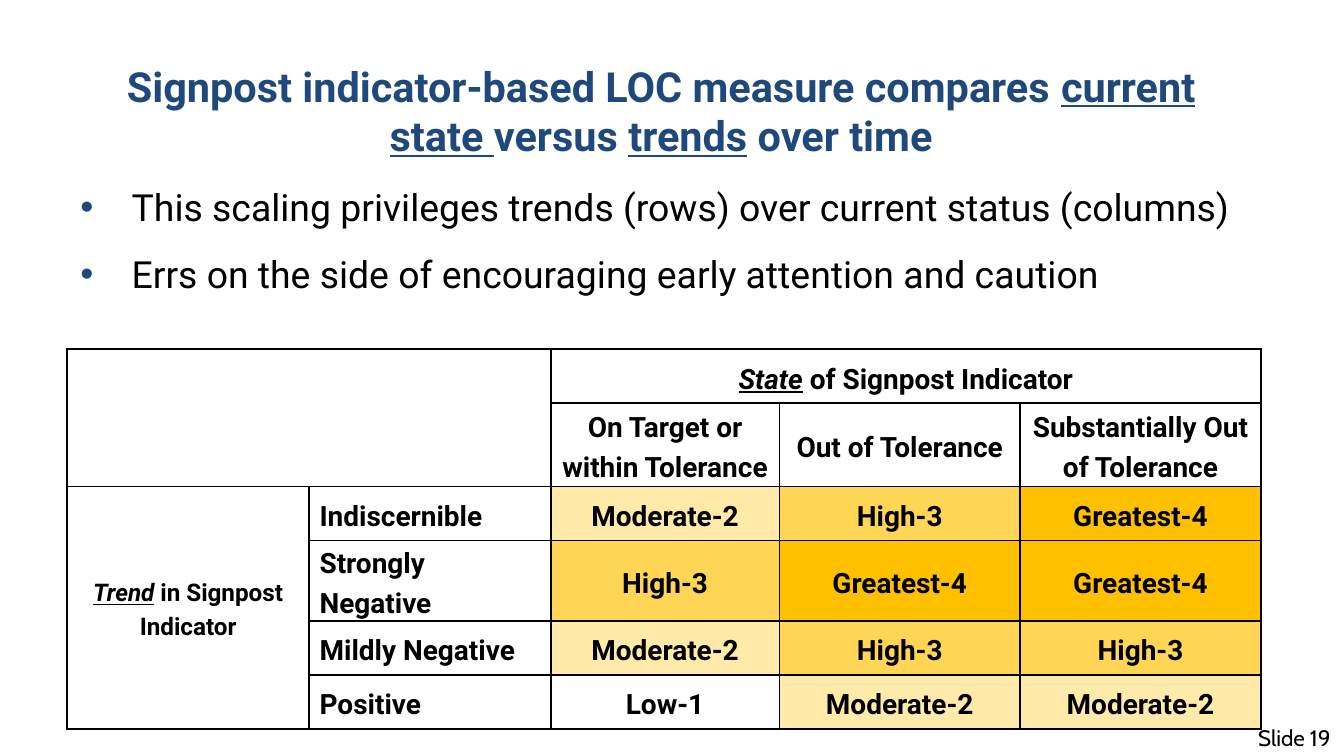
"""Build the slide that rates signpost indicators by state and trend."""
from lxml.etree import SubElement as Sub
from pptx import Presentation
from pptx.dml.color import RGBColor as Rgb
from pptx.enum.text import MSO_ANCHOR as Anchor, PP_ALIGN as Align
from pptx.oxml.ns import qn
from pptx.util import Cm, Pt

HUES = {
    "ink": "000000",
    "navy": "1F497D",
    "white": "FFFFFF",
    "Low-1": "FFFFFF",
    "Moderate-2": "FFEAAA",
    "High-3": "FFD555",
    "Greatest-4": "FFC000",
}
TITLE = [
    ("Signpost indicator-based LOC measure compares ", ""),
    ("current state ", "u"),
    ("versus ", ""),
    ("trends", "u"),
    (" over time", ""),
]
POINTS = [
    ("This scaling privileges trends (rows) over current status (columns)", 18),
    ("Errs on the side of encouraging early attention and caution", 12),
]
STATE = [("State", "iu"), (" of Signpost Indicator", "")]
TREND = [("Trend", "iu"), (" in Signpost Indicator", "")]
HEADS = ["On Target or within Tolerance", "Out of Tolerance",
         "Substantially Out of Tolerance"]
RATES = [
    ("Indiscernible", "Moderate-2", "High-3", "Greatest-4"),
    ("Strongly Negative", "High-3", "Greatest-4", "Greatest-4"),
    ("Mildly Negative", "Moderate-2", "High-3", "High-3"),
    ("Positive", "Low-1", "Moderate-2", "Moderate-2"),
]
WIDTHS = [4.57, 4.57, 4.32, 4.55, 4.55]
HEIGHTS = [0.97, 1.57, 1.02, 1.04, 1.02, 1.02]
MERGES = [((0, 0), (1, 1)), ((0, 2), (0, 4)), ((2, 0), (5, 0))]


def write(para, runs, size, hue="ink", bold=False, face="Roboto"):
    for text, marks in runs:
        run = para.add_run()
        run.text = text
        font = run.font
        font.name, font.size, font.bold = face, Pt(size), bold
        font.italic, font.underline = "i" in marks, "u" in marks
        font.color.rgb = Rgb.from_string(HUES[hue])


def add_box(slide, left, top, width, height):
    frame = slide.shapes.add_textbox(
        Cm(left), Cm(top), Cm(width), Cm(height)).text_frame
    frame.word_wrap = True
    return frame


def add_dot(para):
    props = para._p.get_or_add_pPr()
    props.set("marL", str(Cm(0.97)))
    props.set("indent", str(-Cm(0.97)))
    Sub(Sub(props, qn("a:buClr")), qn("a:srgbClr")).set("val", HUES["navy"])
    Sub(props, qn("a:buFont")).set("typeface", "Arial")
    Sub(props, qn("a:buChar")).set("char", "•")


def style(cell, hue="white"):
    cell.vertical_anchor = Anchor.MIDDLE
    cell.margin_left = cell.margin_right = Cm(0.2)
    cell.margin_top = cell.margin_bottom = 0
    props = cell._tc.get_or_add_tcPr()
    for side in ("lnL", "lnR", "lnT", "lnB"):
        line = Sub(props, qn("a:" + side), w=str(Pt(1)))
        ink = Sub(Sub(line, qn("a:solidFill")), qn("a:srgbClr"))
        ink.set("val", HUES["ink"])
    cell.fill.solid()
    cell.fill.fore_color.rgb = Rgb.from_string(HUES[hue])


def label(cell, runs, size=15, align=Align.CENTER):
    para = cell.text_frame.paragraphs[0]
    para.alignment, para.line_spacing = align, 1.2
    write(para, runs, size, bold=True)


def add_grid(slide):
    grid = slide.shapes.add_table(
        len(HEIGHTS), len(WIDTHS), Cm(1.27), Cm(6.6),
        Cm(sum(WIDTHS)), Cm(sum(HEIGHTS))).table
    grid.first_row = grid.horz_banding = False
    for col, width in zip(grid.columns, WIDTHS):
        col.width = Cm(width)
    for row, height in zip(grid.rows, HEIGHTS):
        row.height = Cm(height)

    texts = {(1, c): head for c, head in enumerate(HEADS, 2)}
    for r, rates in enumerate(RATES, 2):
        texts.update({(r, c): rate for c, rate in enumerate(rates, 1)})
    for r in range(len(HEIGHTS)):
        for c in range(len(WIDTHS)):
            cell, text = grid.cell(r, c), texts.get((r, c))
            style(cell, text if text in HUES else "white")
            if text:
                label(cell, [(text, "")],
                      align=Align.LEFT if c == 1 else Align.CENTER)
    for start, end in MERGES:
        grid.cell(*start).merge(grid.cell(*end))
    for spot, runs, size in (((0, 2), STATE, 15), ((2, 0), TREND, 13)):
        cell = grid.cell(*spot)
        cell.margin_left = cell.margin_right = Cm(0.25)
        cell.margin_top = cell.margin_bottom = Cm(0.13)
        label(cell, runs, size)


def main():
    deck = Presentation()
    deck.slide_width, deck.slide_height = Cm(25.4), Cm(14.29)
    slide = deck.slides.add_slide(deck.slide_layouts[6])

    number = add_box(slide, 13.89, 13.56, 11.51, 0.76).paragraphs[0]
    number.alignment = Align.RIGHT
    write(number, [("Slide 19", "")], 12, face="Cabin")

    frame = add_box(slide, 1.19, 1.19, 22.61, 1.8)
    frame.vertical_anchor = Anchor.MIDDLE
    title = frame.paragraphs[0]
    title.alignment = Align.CENTER
    write(title, TITLE, 22.2, "navy", bold=True)

    body = add_box(slide, 1.27, 3.35, 22.53, 2.6)
    for n, (text, gap) in enumerate(POINTS):
        para = body.add_paragraph() if n else body.paragraphs[0]
        para.space_before = Pt(gap)
        add_dot(para)
        write(para, [(text, "")], 20)

    add_grid(slide)
    deck.save("out.pptx")


if __name__ == "__main__":
    main()
